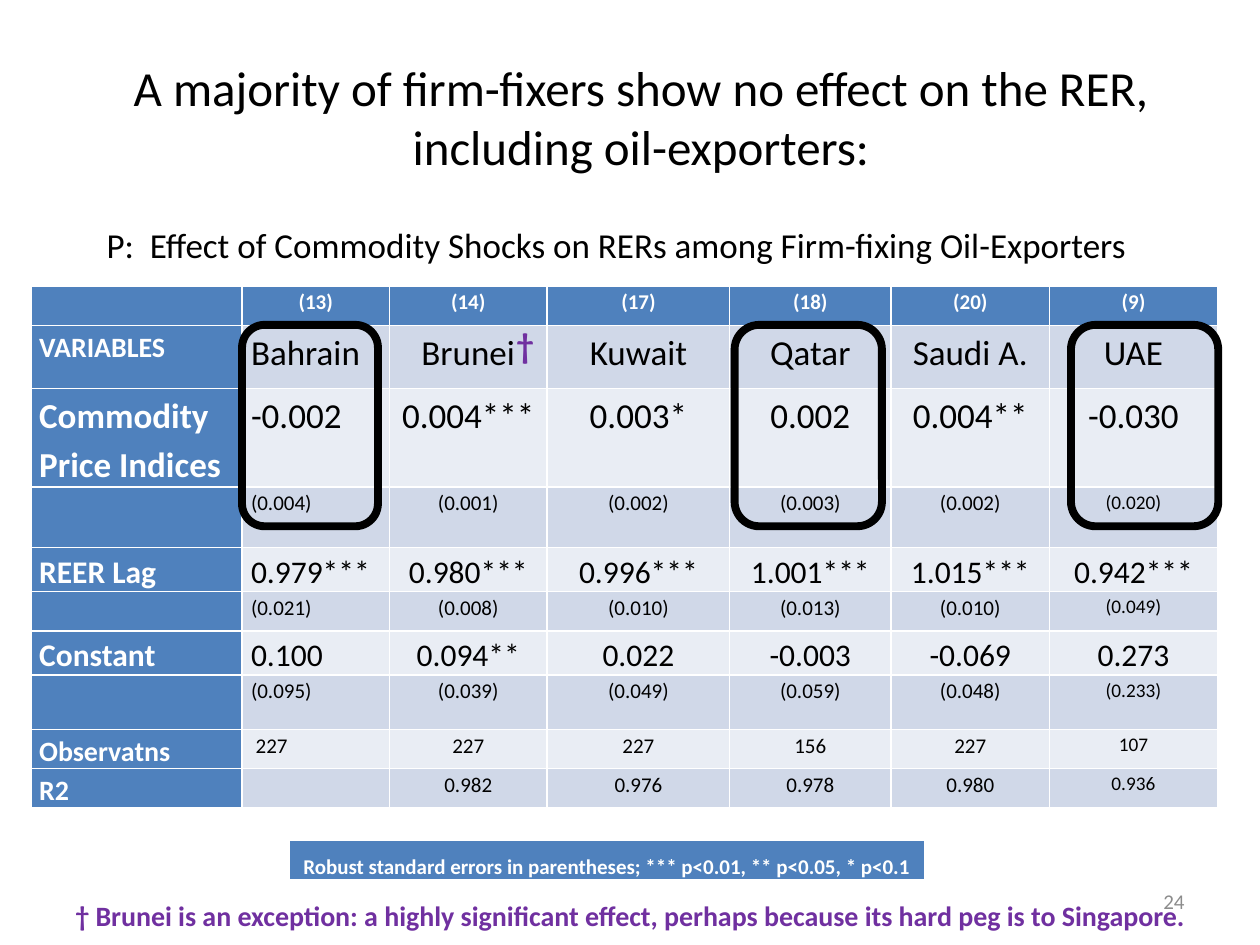
from pptx import Presentation
from pptx.dml.color import RGBColor
from pptx.enum.shapes import MSO_SHAPE
from pptx.enum.text import MSO_ANCHOR, PP_ALIGN
from pptx.util import Cm, Pt

LEFT, CENTER, RIGHT = PP_ALIGN.LEFT, PP_ALIGN.CENTER, PP_ALIGN.RIGHT
MIDDLE = MSO_ANCHOR.MIDDLE
ROUNDED = MSO_SHAPE.ROUNDED_RECTANGLE
TITLE_ONLY = 5

FONT = "Calibri"
BLACK, WHITE, PURPLE, GREY = "000000", "FFFFFF", "7030A0", "8C8C8C"
BLUE, BAND_DARK, BAND_LIGHT = "4F81BD", "D0D8E8", "E9EDF4"

COLUMN_WIDTHS = [4.24, 2.97, 3.18, 3.68, 3.25, 3.2, 3.38]

# Row height (cm), label size, value size, label, values
RESULTS = [
    (0.79, 12, 12, "", ["(13)", "(14)", "(17)", "(18)", "(20)", "(9)"]),
    (1.27, 16, 20, "VARIABLES",
     ["Bahrain", "Brunei", "Kuwait", "Qatar", "Saudi A.", "UAE"]),
    (1.98, 20, 20, "Commodity Price Indices",
     ["-0.002", "0.004***", "0.003*", "0.002", "0.004**", "-0.030"]),
    (1.22, 12, 12, "",
     ["(0.004)", "(0.001)", "(0.002)", "(0.003)", "(0.002)", "(0.020)"]),
    (0.84, 18, 18, "REER Lag",
     ["0.979***", "0.980***", "0.996***", "1.001***", "1.015***", "0.942***"]),
    (0.79, 12, 12, "",
     ["(0.021)", "(0.008)", "(0.010)", "(0.013)", "(0.010)", "(0.049)"]),
    (0.84, 18, 18, "Constant",
     ["0.100", "0.094**", "0.022", "-0.003", "-0.069", "0.273"]),
    (1.09, 12, 12, "",
     ["(0.095)", "(0.039)", "(0.049)", "(0.059)", "(0.048)", "(0.233)"]),
    (0.79, 16, 12, "Observatns",
     ["\u00a0227".replace("\u00a0", chr(160)), "227", "227", "156", "227", "107"]),
    (0.79, 16, 12, "R2", ["", "0.982", "0.976", "0.978", "0.980", "0.936"]),
]


def color(value):
    return RGBColor.from_string(value)


def format_text(frame, text, size, ink=BLACK, bold=False, align=LEFT):
    para = frame.paragraphs[0]
    para.text = text
    para.alignment = align
    para.font.name = FONT
    para.font.size = Pt(size)
    para.font.bold = bold
    para.font.color.rgb = color(ink)
    return para


def add_text(page, left, top, width, height, text, size, wrap=True, **style):
    box = page.shapes.add_textbox(Cm(left), Cm(top), Cm(width), Cm(height))
    box.text_frame.word_wrap = wrap
    format_text(box.text_frame, text, size, **style)
    return box


def fill_cell(cell, text, size, fill, margin=0.18, top=0, **style):
    cell.fill.solid()
    cell.fill.fore_color.rgb = color(fill)
    cell.margin_left = cell.margin_right = Cm(margin)
    cell.margin_top, cell.margin_bottom = Cm(top), 0
    if text:
        para = format_text(cell.text_frame, text, size, **style)
        para.line_spacing = 1.15


def add_grid(page, left, top, widths, heights):
    frame = page.shapes.add_table(
        len(heights), len(widths), Cm(left), Cm(top),
        Cm(sum(widths)), Cm(sum(heights)))
    table = frame.table
    table.horz_banding = False
    for column, width in zip(table.columns, widths):
        column.width = Cm(width)
    for row, height in zip(table.rows, heights):
        row.height = Cm(height)
    return table


def add_results(page):
    table = add_grid(page, 0.64, 5.77, COLUMN_WIDTHS,
                     [height for height, *_ in RESULTS])
    last = len(COLUMN_WIDTHS) - 1
    for r, (_, label_size, size, label, values) in enumerate(RESULTS):
        header = r == 0
        fill_cell(table.cell(r, 0), label, label_size, BLUE,
                  margin=0.15, ink=WHITE, bold=True)
        band = BLUE if header else (BAND_DARK if r % 2 else BAND_LIGHT)
        for c, value in enumerate(values, start=1):
            # Small figures are one point smaller in the last column
            smaller = c == last and size == 12 and not header
            fill_cell(table.cell(r, c), value, size - smaller, band,
                      ink=WHITE if header else BLACK, bold=header,
                      align=LEFT if c == 1 and not header else CENTER)


def add_note(page):
    table = add_grid(page, 5.84, 16.94, [12.8], [0.79])
    fill_cell(table.cell(0, 0),
              " Robust standard errors in parentheses; *** p<0.01, ** p<0.05, * p<0.1",
              12, BLUE, top=0.2, ink=WHITE, bold=True)


def add_highlight(page, left, width):
    box = page.shapes.add_shape(ROUNDED, Cm(left), Cm(6.55), Cm(width), Cm(4.06))
    box.shadow.inherit = False
    box.fill.background()
    box.line.color.rgb = color(BLACK)
    box.line.width = Pt(4.5)


def add_title(page, text):
    title = page.shapes.title
    title.left, title.top = Cm(0.64), Cm(0.76)
    title.width, title.height = Cm(24.56), Cm(3.18)
    title.text_frame.vertical_anchor = MIDDLE
    format_text(title.text_frame, text, 28, align=CENTER)


def main():
    deck = Presentation()
    deck.slide_width, deck.slide_height = Cm(25.4), Cm(19.05)
    page = deck.slides.add_slide(deck.slide_layouts[TITLE_ONLY])

    # Title and tables
    add_title(page, "A majority of firm-fixers show no effect on the RER, "
                    "including oil-exporters:")
    add_results(page)
    add_note(page)
    add_text(page, 1.9, 4.39, 21.79, 1.12,
             "P:  Effect of Commodity Shocks on RERs among Firm-fixing Oil-Exporters", 20)

    # Countries without a significant effect
    for left, width in [(4.88, 2.74), (14.81, 2.97), (21.59, 2.97)]:
        add_highlight(page, left, width)

    # Brunei footnote, its mark in the table, and the page number
    add_text(page, 1.27, 17.98, 23.7, 0.94,
             "† Brunei is an exception: a highly significant effect, "
             "perhaps because its hard peg is to Singapore.",
             16, ink=PURPLE, bold=True)
    add_text(page, 10.16, 6.4, 0.86, 1.12, "†", 20, wrap=False,
             ink=PURPLE, bold=True)
    number = add_text(page, 18.21, 17.65, 5.92, 1.02, "24", 12,
                      ink=GREY, align=RIGHT)
    number.text_frame.vertical_anchor = MIDDLE

    deck.save("out.pptx")


if __name__ == "__main__":
    main()
